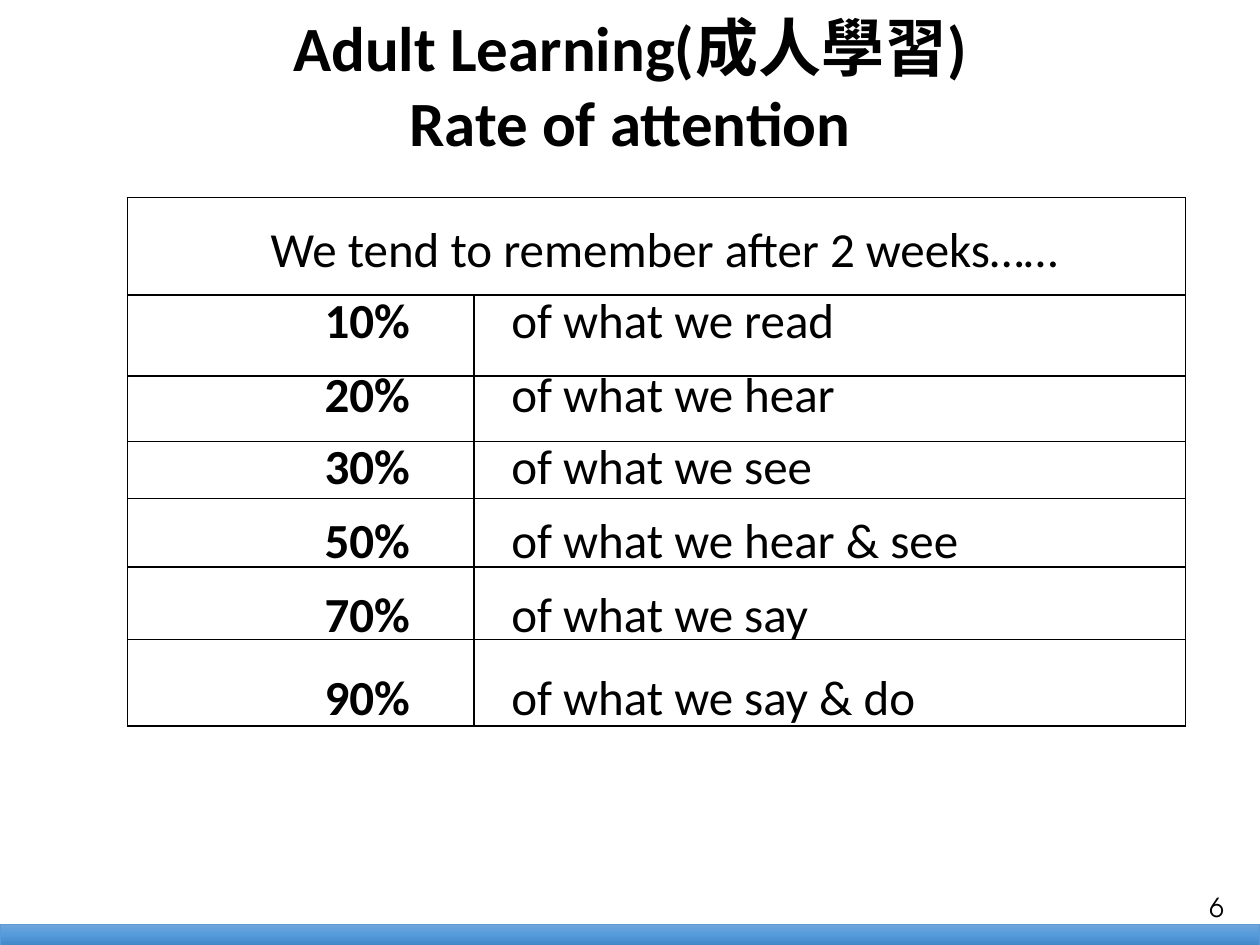
from copy import deepcopy

from pptx import Presentation
from pptx.dml.color import RGBColor
from pptx.enum.shapes import MSO_SHAPE as Shape
from pptx.enum.text import MSO_ANCHOR as Anchor, MSO_AUTO_SIZE as AutoSize, PP_ALIGN as Align
from pptx.oxml.ns import qn
from pptx.util import Pt
from lxml.etree import SubElement

BLACK = RGBColor(0x00, 0x00, 0x00)
WHITE = RGBColor(0xFF, 0xFF, 0xFF)
BAR_LINE = RGBColor(0x5B, 0x9B, 0xD5)
BAR_STOPS = [
    (0, RGBColor(0x71, 0xA6, 0xDB)),
    (0.5, RGBColor(0x55, 0x9B, 0xDB)),
    (1, RGBColor(0x44, 0x8A, 0xCA)),
]

PAGE_WIDTH, PAGE_HEIGHT = 720, 540
HEADING = "We tend to remember after 2 weeks……"
RATES = [
    ("10%", "of what we read"),
    ("20%", "of what we hear"),
    ("30%", "of what we see"),
    ("50%", "of what we hear & see"),
    ("70%", "of what we say"),
    ("90%", "of what we say & do"),
]
RATE_INDENT = 77


class SlideBuilder:
    """Holds the current slide and the base text style."""

    def __init__(self, page):
        self.page = page
        self.base = {"name": "Calibri", "size": Pt(28), "bold": False}

    def add_lines(self, frame, lines, align=Align.LEFT, **changes):
        for index, line in enumerate(lines):
            para = frame.paragraphs[0] if index == 0 else frame.add_paragraph()
            para.alignment = align
            para.space_before = Pt(0)
            span = para.add_run()
            span.text = line
            for key, value in {**self.base, **changes}.items():
                setattr(span.font, key, value)
            span.font.color.rgb = BLACK

    def title(self, lines, left, top, width, height):
        box = self.page.shapes.title
        places = {"left": left, "top": top, "width": width, "height": height}
        for key, value in places.items():
            setattr(box, key, Pt(value))
        box.text_frame.auto_size = AutoSize.NONE
        box.text_frame.vertical_anchor = Anchor.TOP
        self.add_lines(box.text_frame, lines, Align.CENTER, size=Pt(36), bold=True)

    def bar(self, left, top, width, height):
        bar = self.page.shapes.add_shape(
            Shape.RECTANGLE, Pt(left), Pt(top), Pt(width), Pt(height))
        bar.shadow.inherit = False
        bar.fill.gradient()
        bar.fill.gradient_angle = 270
        stop_list = next(bar.element.spPr.iter(qn("a:gsLst")))
        stop_list.append(deepcopy(stop_list[0]))
        for stop, (position, color) in zip(bar.fill.gradient_stops, BAR_STOPS):
            stop.position = position
            stop.color.rgb = color
        bar.line.color.rgb = BAR_LINE
        bar.line.width = Pt(0.5)

    def number(self, text, left, top, width, height):
        box = self.page.shapes.add_textbox(Pt(left), Pt(top), Pt(width), Pt(height))
        frame = box.text_frame
        frame.word_wrap = True
        margins = {"margin_left": 5, "margin_right": 5, "margin_top": 3, "margin_bottom": 3}
        for key, value in margins.items():
            setattr(frame, key, Pt(value))
        self.add_lines(frame, [text], Align.CENTER, name="TeX Gyre Adventor", size=Pt(15))

    def table(self, left, top, widths, heights):
        """Add an unbanded table whose first row is one merged cell."""
        table = self.page.shapes.add_table(
            len(heights), len(widths), Pt(left), Pt(top),
            Pt(sum(widths)), Pt(sum(heights))).table
        table.first_row = table.horz_banding = False
        for column, width in zip(table.columns, widths):
            column.width = Pt(width)
        for row, height in zip(table.rows, heights):
            row.height = Pt(height)
        table.cell(0, 0).merge(table.cell(0, len(widths) - 1))
        return table

    def rate_table(self, left, top, widths, heights):
        table = self.table(left, top, widths, heights)
        for cell in table.iter_cells():
            cell.fill.solid()
            cell.fill.fore_color.rgb = WHITE
        self.add_lines(table.cell(0, 0).text_frame, [HEADING], Align.CENTER)
        for row, (rate, activity) in enumerate(RATES, start=1):
            rate_cell = table.cell(row, 0)
            rate_cell.margin_left = Pt(RATE_INDENT)
            self.add_lines(rate_cell.text_frame, [rate], Align.CENTER, bold=True)
            self.add_lines(table.cell(row, 1).text_frame, [activity])

    def grid(self, left, top, widths, heights):
        """Add an empty table that shows only its black borders."""
        for cell in self.table(left, top, widths, heights).iter_cells():
            properties = cell._tc.get_or_add_tcPr()
            for side in ("a:lnL", "a:lnR", "a:lnT", "a:lnB"):
                line = SubElement(properties, qn(side), w=str(Pt(1)))
                fill = SubElement(line, qn("a:solidFill"))
                SubElement(fill, qn("a:srgbClr"), val=str(BLACK))
            cell.fill.background()


def main():
    deck = Presentation()
    deck.slide_width, deck.slide_height = Pt(PAGE_WIDTH), Pt(PAGE_HEIGHT)
    slide = SlideBuilder(deck.slides.add_slide(deck.slide_layouts[5]))

    slide.bar(0, 528, PAGE_WIDTH, 12)
    slide.number("6", 680.5, 506, 29.5, 23)
    slide.rate_table(65, 122.5, [220, 409], [39.5, 42, 41, 42.5, 42.5, 47.5, 50])
    slide.title(["Adult Learning(成人學習)", "Rate of attention"], 0, 1, PAGE_WIDTH, 93.5)
    slide.grid(73, 113, [198, 406.5], [55.5, 46.5, 37.5, 32.5, 39, 41.5, 49.5])

    deck.save("out.pptx")


if __name__ == "__main__":
    main()
